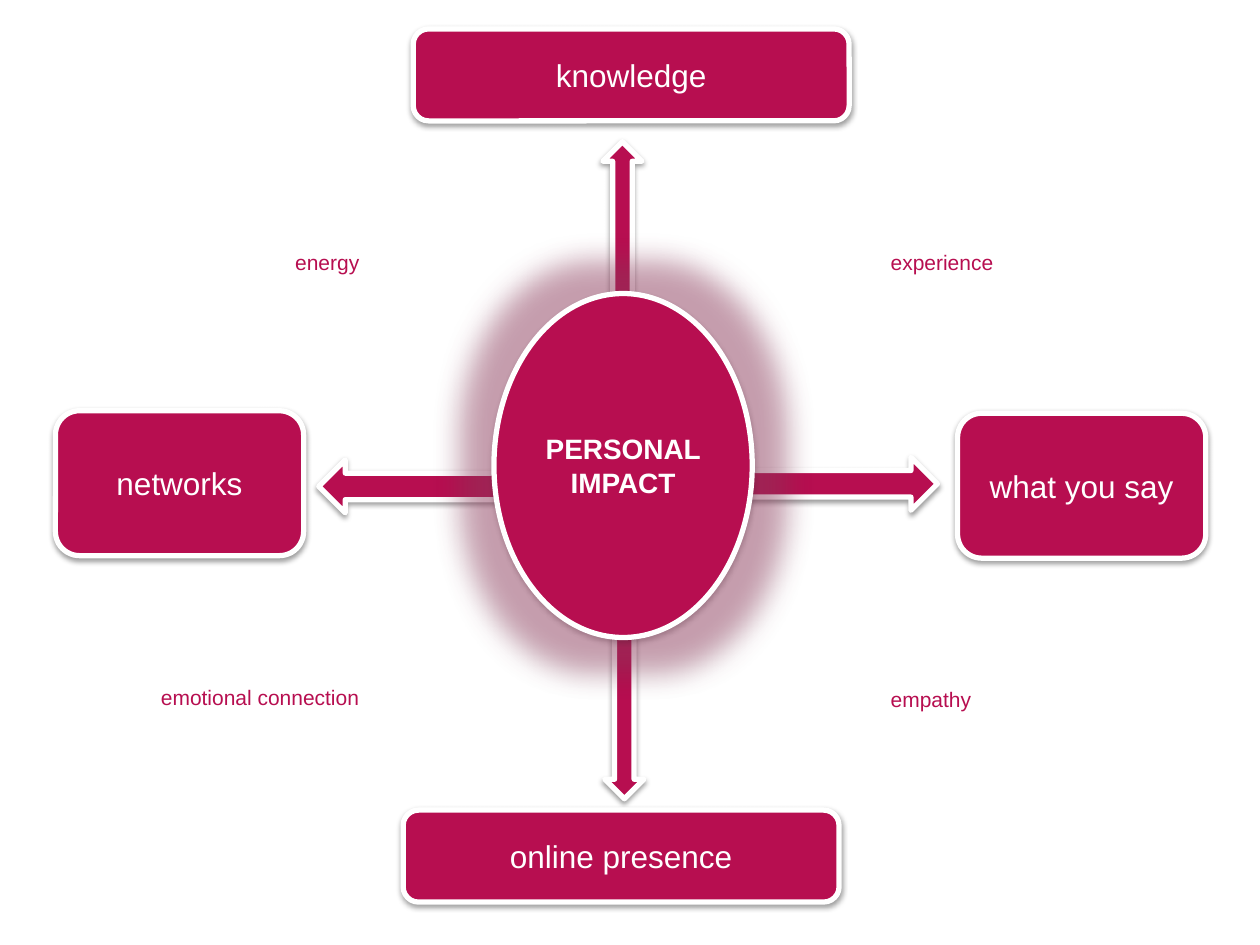
import pptx
import pptx.util
import pptx.dml.color
import pptx.enum.shapes
import pptx.enum.text
import pptx.oxml
import pptx.oxml.ns
from dataclasses import dataclass

Inches = pptx.util.Inches
Pt = pptx.util.Pt
Rgb = pptx.dml.color.RGBColor.from_string
Kind = pptx.enum.shapes.MSO_SHAPE
Align = pptx.enum.text.PP_ALIGN
Anchor = pptx.enum.text.MSO_ANCHOR
Fit = pptx.enum.text.MSO_AUTO_SIZE


@dataclass
class Theme:
    face: str = "Arial"
    main: str = "B70E50"
    light: str = "FFFFFF"
    dark: str = "000000"
    halo: str = "AA466E"
    box: int = 18
    core: int = 16
    note: int = 12
    line: int = 3


class Board:
    def __init__(self, theme, slide):
        self.theme = theme
        self.slide = slide

    def effect(self, shape, tag, color, alpha, attrs):
        node = pptx.oxml.parse_xml(
            f'<a:{tag} {pptx.oxml.ns.nsdecls("a")} {attrs}>'
            f'<a:srgbClr val="{color}"><a:alpha val="{alpha * 1000}"/></a:srgbClr>'
            f'</a:{tag}>')
        shape._element.spPr.find(pptx.oxml.ns.qn("a:effectLst")).append(node)

    def text(self, shape, words, size, color, align, bold=False):
        frame = shape.text_frame
        frame.word_wrap = True
        para = frame.paragraphs[0]
        para.alignment = align
        run = para.add_run()
        run.text = words
        style = {"name": self.theme.face, "size": Pt(size), "bold": bold}
        for key, value in style.items():
            setattr(run.font, key, value)
        run.font.color.rgb = Rgb(color)

    def shape(self, kind, place, glow=0):
        shape = self.slide.shapes.add_shape(kind, *map(Inches, place))
        shape.fill.solid()
        shape.fill.fore_color.rgb = Rgb(self.theme.main)
        shape.line.color.rgb = Rgb(self.theme.light)
        shape.line.width = Pt(self.theme.line)
        shape.shadow.inherit = False
        if glow:
            self.effect(shape, "glow", self.theme.halo, 40, f'rad="{Pt(glow)}"')
        self.effect(shape, "outerShdw", self.theme.dark, 38,
                    f'blurRad="{Pt(3.1)}" dist="{Pt(1.6)}" dir="5400000" rotWithShape="0"')
        return shape

    def arrow(self, place, turn):
        self.shape(Kind.RIGHT_ARROW, place).rotation = turn

    def label(self, kind, place, words, size, bold=False, glow=0):
        shape = self.shape(kind, place, glow)
        shape.text_frame.vertical_anchor = Anchor.MIDDLE
        self.text(shape, words, size, self.theme.light, Align.CENTER, bold)

    def box(self, place, words):
        self.label(Kind.ROUNDED_RECTANGLE, place, words, self.theme.box)

    def core(self, place, words):
        self.label(Kind.OVAL, place, words, self.theme.core, True, 34)

    def note(self, left, top, words, align):
        shape = self.slide.shapes.add_textbox(*map(Inches, (left, top, 1.89, 0.3)))
        self.text(shape, words, self.theme.note, self.theme.main, align)
        shape.text_frame.auto_size = Fit.SHAPE_TO_FIT_TEXT


def main():
    deck = pptx.Presentation()
    deck.slide_width = Inches(10)
    deck.slide_height = Inches(7.5)
    board = Board(Theme(), deck.slides.add_slide(deck.slide_layouts[6]))

    for place, turn in (
        ((4.22, 5.45, 1.47, 0.31), 90),
        ((5.94, 3.63, 1.5, 0.42), 0),
        ((2.53, 3.65, 1.5, 0.42), 180),
        ((4.18, 1.73, 1.52, 0.31), 270),
    ):
        board.arrow(place, turn)

    wide, tall = (3.46, 0.73), (1.97, 1.15)
    for left, top, size, words in (
        (3.28, 0.23, wide, "knowledge"),
        (0.44, 3.26, tall, "networks"),
        (3.2, 6.43, wide, "online presence"),
        (7.6, 3.28, tall, "what you say"),
    ):
        board.box((left, top, *size), words)

    board.core((3.92, 2.33, 2.05, 2.73), "PERSONAL IMPACT")

    for left, top, words, align in (
        (1.06, 5.38, "emotional connection", Align.RIGHT),
        (1.06, 1.93, "energy", Align.RIGHT),
        (6.97, 5.4, "empathy", Align.LEFT),
        (6.97, 1.93, "experience", Align.LEFT),
    ):
        board.note(left, top, words, align)

    deck.save("out.pptx")


if __name__ == "__main__":
    main()
